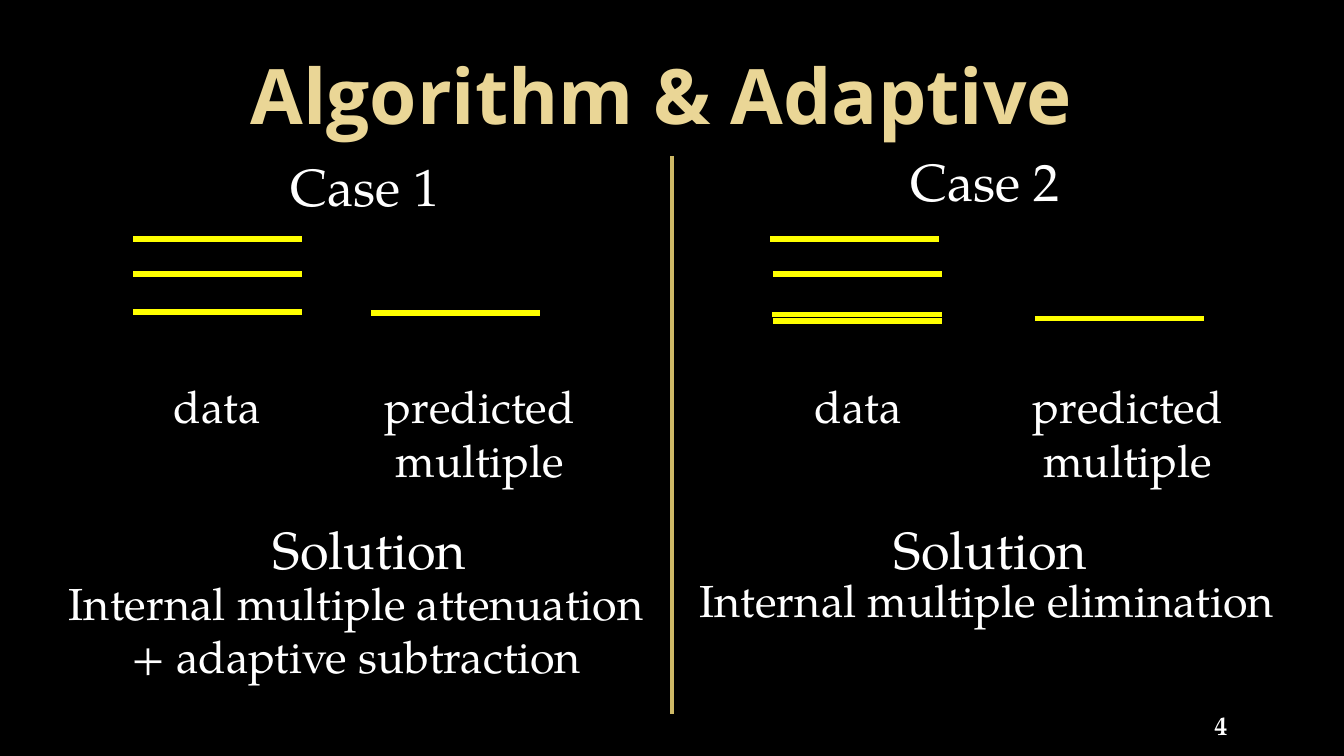
from lxml import etree
from pptx import Presentation
from pptx import util as u
from pptx.dml.color import RGBColor
from pptx.enum import shapes, text
from pptx.oxml import ns

BLACK = RGBColor(0x00, 0x00, 0x00)
WHITE = RGBColor(0xFF, 0xFF, 0xFF)
YELLOW = RGBColor(0xFF, 0xFF, 0x00)
SAND = RGBColor(0xEA, 0xD6, 0x96)
GOLD = RGBColor(0xCE, 0xB9, 0x66)
SERIF = "TeX Gyre Pagella"
SANS = "Open Sans"

deck = Presentation()
deck.slide_width, deck.slide_height = u.Pt(720), u.Pt(405)
slide = deck.slides.add_slide(deck.slide_layouts[6])
slide.background.fill.solid()
slide.background.fill.fore_color.rgb = BLACK


def add_text(lines, left, top, width, height, size, font=SERIF, color=WHITE, bold=False):
    box = slide.shapes.add_textbox(u.Pt(left), u.Pt(top), u.Pt(width), u.Pt(height))
    frame = box.text_frame
    frame.word_wrap = False
    for i, line in enumerate(lines):
        paragraph = frame.paragraphs[0] if i == 0 else frame.add_paragraph()
        paragraph.alignment = text.PP_ALIGN.CENTER
        run = paragraph.add_run()
        run.text = line
        run.font.name = font
        run.font.size = u.Pt(size)
        run.font.bold = bold
        run.font.color.rgb = color
    return frame


def add_line(x1, y1, x2, y2, color, weight):
    line = slide.shapes.add_connector(
        shapes.MSO_CONNECTOR.STRAIGHT, u.Pt(x1), u.Pt(y1), u.Pt(x2), u.Pt(y2))
    line.line.color.rgb = color
    line.line.width = u.Pt(weight)
    etree.SubElement(line._element.spPr, ns.qn("a:effectLst"))


title = add_text(["Algorithm & Adaptive"], 36, 16.5, 648, 67.5, 41, SANS, SAND, True)
title.word_wrap = True
title.vertical_anchor = text.MSO_ANCHOR.MIDDLE
title.margin_right = u.Pt(18)

add_line(360, 83.5, 360, 382.3, GOLD, 2)

cases = [
    ("Case 1", 147.5, 79.2, 85.7, 198.7, 138.2, 28.1, 304.6,
     ["Internal multiple attenuation", "+ adaptive subtraction"]),
    ("Case 2", 479.5, 76.3, 429.1, 545.8, 470.9, 365.8, 303.1,
     ["Internal multiple elimination"]),
]
for case, case_x, case_y, data_x, predicted_x, solution_x, method_x, method_y, method in cases:
    add_text([case], case_x, case_y, 96, 41, 28)
    add_text(["data"], data_x, 199.4, 61.2, 36, 24)
    add_text(["predicted", "multiple"], predicted_x, 199.4, 116.6, 65.5, 24)
    add_text(["Solution"], solution_x, 273.6, 119.5, 41, 28)
    add_text(method, method_x, method_y, 325.4, 36 + 29.5 * (len(method) - 1), 24)

events = [
    (71.3, 128.2), (71.3, 146.9), (71.3, 167), (198.7, 167.8),
    (412.6, 128.2), (414, 146.9), (413.7, 168.5), (414, 172.1), (554.4, 170.6),
]
for x, y in events:
    add_line(x, y, x + 90.7, y, YELLOW, 3)

number = add_text(["4"], 624.2, 378.7, 59.8, 21.6, 14, bold=True)
number.word_wrap = True
number.vertical_anchor = text.MSO_ANCHOR.BOTTOM
number.margin_left = number.margin_right = 0

deck.save("out.pptx")
